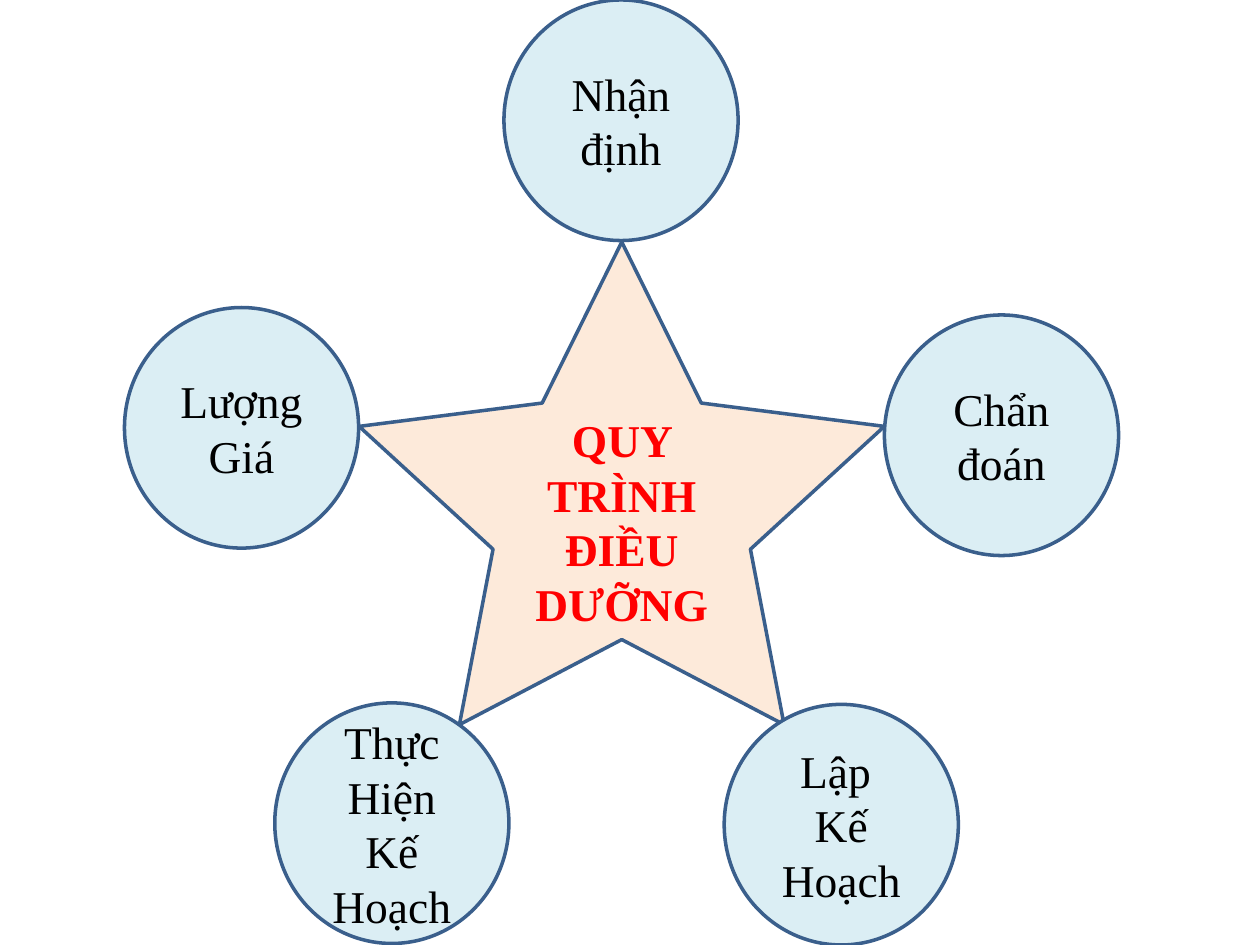
import pptx
import pptx.util
from pptx.dml.color import RGBColor
from pptx.enum.shapes import MSO_SHAPE
from pptx.enum.text import MSO_ANCHOR, PP_ALIGN
from pptx.util import Cm

COLORS = {
    "star": "FDEADA",
    "step": "DBEEF4",
    "outline": "3A5F8C",
    "title": "FF0000",
    "text": "000000",
}
STEP_WIDTH, STEP_HEIGHT = 4.72, 4.85
STEPS = [
    (10.16, 0, ["Nhận định"]),
    (17.83, 6.35, ["Chẩn đoán"]),
    (14.6, 14.2, ["Lập ", "Kế Hoạch"]),
    (2.51, 6.2, ["Lượng Giá"]),
    (5.54, 14.17, ["Thực Hiện", "Kế Hoạch"]),
]


def add_labelled_shape(slide, kind, box, lines, fill, color, bold=False):
    shape = slide.shapes.add_shape(kind, *(Cm(length) for length in box))
    shape.shadow.inherit = False
    shape.fill.solid()
    shape.fill.fore_color.rgb = RGBColor.from_string(COLORS[fill])
    shape.line.color.rgb = RGBColor.from_string(COLORS["outline"])
    shape.line.width = pptx.util.Pt(2)
    frame = shape.text_frame
    frame.word_wrap = True
    frame.vertical_anchor = MSO_ANCHOR.MIDDLE
    frame.text = "\n".join(lines)
    for paragraph in frame.paragraphs:
        paragraph.alignment = PP_ALIGN.CENTER
        paragraph.font.name = "Times New Roman"
        paragraph.font.size = pptx.util.Pt(26)
        paragraph.font.bold = bold
        paragraph.font.color.rgb = RGBColor.from_string(COLORS[color])
    return shape


def add_star(slide, box):
    star = add_labelled_shape(slide, MSO_SHAPE.STAR_5_POINT, box,
                              ["QUY TRÌNH ĐIỀU DƯỠNG"], "star", "title", bold=True)
    star.adjustments[0] = 0.245


def add_step(slide, box, lines):
    add_labelled_shape(slide, MSO_SHAPE.FLOWCHART_CONNECTOR, box, lines, "step", "text")


def main():
    presentation = pptx.Presentation()
    presentation.slide_width = Cm(25.4)
    presentation.slide_height = Cm(19.05)
    slide = presentation.slides.add_slide(presentation.slide_layouts[6])
    add_star(slide, (7.24, 4.88, 10.59, 9.73))
    for left, top, lines in STEPS:
        add_step(slide, (left, top, STEP_WIDTH, STEP_HEIGHT), lines)
    presentation.save("out.pptx")


if __name__ == "__main__":
    main()
